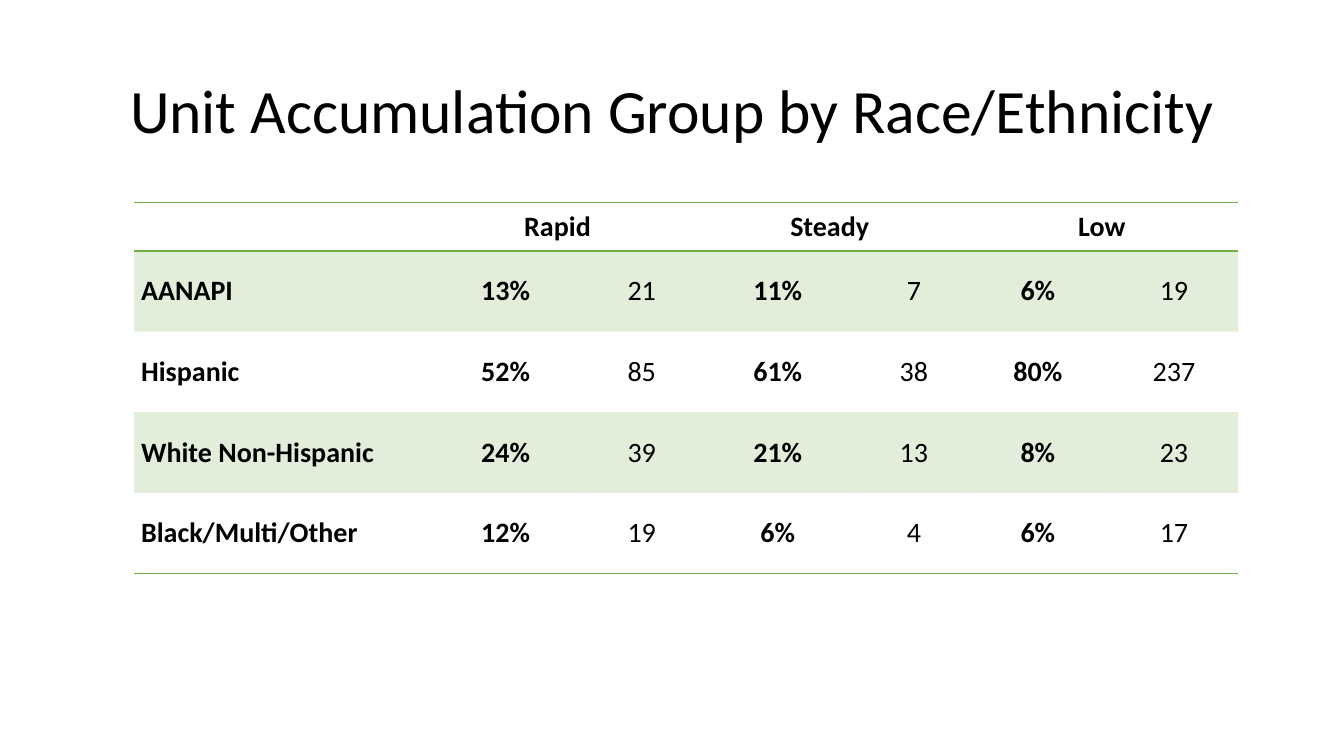
import dataclasses

import lxml.etree
import pptx
import pptx.dml.color
import pptx.enum.text
import pptx.oxml.ns
import pptx.util

Inches = pptx.util.Inches
Pt = pptx.util.Pt
PP_ALIGN = pptx.enum.text.PP_ALIGN
MIDDLE = pptx.enum.text.MSO_ANCHOR.MIDDLE
qn = pptx.oxml.ns.qn

FONT = "Calibri"
BLACK = "000000"
GREEN = "70AD47"
BAND_OPACITY = 20
PLAIN_TABLE_STYLE = "{2D5ABB26-0587-4C30-8999-92F81FD0307C}"
COLUMN_WIDTHS = (2.85, 1.67, 1.03, 1.67, 1.03, 1.43, 1.27)
HEADER_HEIGHT, ROW_HEIGHT = 0.48, 0.8
ACCUMULATION_GROUPS = ("Rapid", "Steady", "Low")


@dataclasses.dataclass(frozen=True)
class Ethnicity:
    name: str
    shares: tuple[int, ...]
    counts: tuple[int, ...]


ETHNICITIES = (
    Ethnicity("AANAPI", (13, 11, 6), (21, 7, 19)),
    Ethnicity("Hispanic", (52, 61, 80), (85, 38, 237)),
    Ethnicity("White Non-Hispanic", (24, 21, 8), (39, 13, 23)),
    Ethnicity("Black/Multi/Other", (12, 6, 6), (19, 4, 17)),
)


def rgb(color: str) -> pptx.dml.color.RGBColor:
    return pptx.dml.color.RGBColor.from_string(color)


def style_paragraph(paragraph, size: float, bold: bool, align) -> None:
    paragraph.alignment = align
    paragraph.font.name = FONT
    paragraph.font.size = Pt(size)
    paragraph.font.bold = bold
    paragraph.font.color.rgb = rgb(BLACK)


def write_cell(cell, text: str, bold: bool = True, align=PP_ALIGN.CENTER) -> None:
    cell.text = text
    cell.vertical_anchor = MIDDLE
    cell.margin_left = cell.margin_right = Inches(0.07)
    cell.margin_top = cell.margin_bottom = 0
    style_paragraph(cell.text_frame.paragraphs[0], 20, bold, align)


def add_border(cell, side: str) -> None:
    """Draw a 1 pt green line on one side ("T" or "B") of the cell."""
    properties = cell._tc.get_or_add_tcPr()
    line = lxml.etree.SubElement(properties, qn(f"a:ln{side}"), w=str(Pt(1)))
    fill = lxml.etree.SubElement(line, qn("a:solidFill"))
    lxml.etree.SubElement(fill, qn("a:srgbClr"), val=GREEN)


def fill_cell(cell, banded: bool) -> None:
    if not banded:
        cell.fill.background()
        return
    cell.fill.solid()
    cell.fill.fore_color.rgb = rgb(GREEN)
    color = cell._tc.tcPr.find(f".//{qn('a:srgbClr')}")
    lxml.etree.SubElement(color, qn("a:alpha"), val=str(BAND_OPACITY * 1000))


def add_title(slide) -> None:
    title = slide.shapes.title
    title.left, title.top = Inches(0.92), Inches(0.4)
    title.width, title.height = Inches(11.5), Inches(1.45)
    title.text_frame.text = "Unit Accumulation Group by Race/Ethnicity"
    title.text_frame.vertical_anchor = MIDDLE
    paragraph = title.text_frame.paragraphs[0]
    paragraph.line_spacing = 0.9
    style_paragraph(paragraph, 44, False, PP_ALIGN.CENTER)


def add_ethnicity_table(slide) -> None:
    row_count = len(ETHNICITIES) + 1
    table = slide.shapes.add_table(
        row_count, len(COLUMN_WIDTHS), Inches(1.33), Inches(2.01),
        Inches(sum(COLUMN_WIDTHS)),
        Inches(HEADER_HEIGHT + ROW_HEIGHT * len(ETHNICITIES)),
    ).table
    table._tbl.tblPr.find(qn("a:tableStyleId")).text = PLAIN_TABLE_STYLE
    for column, width in zip(table.columns, COLUMN_WIDTHS):
        column.width = Inches(width)

    for index, row in enumerate(table.rows):
        row.height = Inches(ROW_HEIGHT if index else HEADER_HEIGHT)
        for cell in row.cells:
            if index == 0:
                add_border(cell, "T")
            if index in (0, row_count - 1):
                add_border(cell, "B")
            fill_cell(cell, banded=index % 2 == 1)

    for group, name in enumerate(ACCUMULATION_GROUPS):
        share_column = 1 + 2 * group
        heading = table.cell(0, share_column)
        heading.merge(table.cell(0, share_column + 1))
        write_cell(heading, name)

    for index, ethnicity in enumerate(ETHNICITIES, start=1):
        write_cell(table.cell(index, 0), ethnicity.name, align=PP_ALIGN.LEFT)
        for group, (share, count) in enumerate(zip(ethnicity.shares, ethnicity.counts)):
            share_column = 1 + 2 * group
            write_cell(table.cell(index, share_column), f"{share}%")
            write_cell(table.cell(index, share_column + 1), str(count), bold=False)


def main() -> None:
    presentation = pptx.Presentation()
    presentation.slide_width = Inches(13.33)
    presentation.slide_height = Inches(7.5)
    title_only = presentation.slide_layouts.get_by_name("Title Only")
    slide = presentation.slides.add_slide(title_only)
    add_title(slide)
    add_ethnicity_table(slide)
    presentation.save("out.pptx")


if __name__ == "__main__":
    main()
